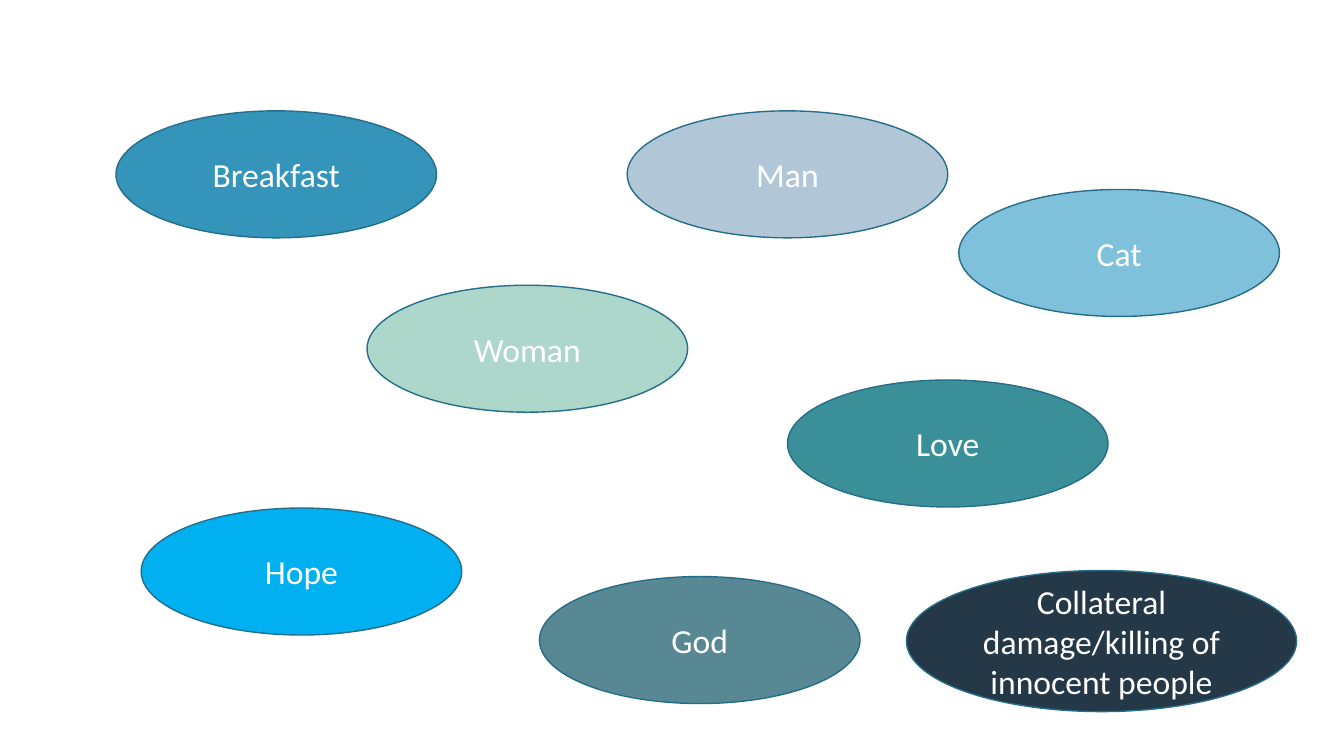
"""Build a slide of concept words, each in its own coloured ellipse."""
from dataclasses import dataclass

import pptx
import pptx.dml.color
import pptx.enum.shapes
import pptx.enum.text
import pptx.util

Inches = pptx.util.Inches


@dataclass(frozen=True)
class Concept:
    """A word with the place, fill and size of its ellipse in inches."""
    word: str
    left: float
    top: float
    fill: str
    width: float = 3.18
    height: float = 1.26


CONCEPTS = [
    Concept("Breakfast", 1.15, 1.1, "3494BA"),
    Concept("Man", 6.22, 1.1, "B1C6D7"),
    Concept("Woman", 3.64, 2.83, "ACD7CA"),
    Concept("Hope", 1.4, 5.04, "00B0F0"),
    Concept("Love", 7.81, 3.77, "3A8F98"),
    Concept("God", 5.35, 5.72, "588894"),
    Concept("Cat", 9.51, 1.88, "7FC1DB"),
    Concept("Collateral damage/killing of innocent people", 8.99, 5.66, "253848", 3.87, 1.4),
]


def paint(color_format, hex_color: str) -> None:
    """Set a colour from a hex string."""
    color_format.rgb = pptx.dml.color.RGBColor.from_string(hex_color)


def write(frame, text: str, *, size: float = 24, font: str = "Calibri", color: str = "FFFFFF") -> None:
    """Write centred, wrapped text into a text frame."""
    frame.word_wrap = True
    frame.vertical_anchor = pptx.enum.text.MSO_ANCHOR.MIDDLE
    paragraph = frame.paragraphs[0]
    paragraph.alignment = pptx.enum.text.PP_ALIGN.CENTER
    run = paragraph.add_run()
    run.text = text
    run.font.size = pptx.util.Pt(size)
    run.font.name = font
    paint(run.font.color, color)


def draw_concept(slide, concept: Concept) -> None:
    """Draw one concept as a filled and outlined ellipse."""
    ellipse = slide.shapes.add_shape(
        pptx.enum.shapes.MSO_SHAPE.OVAL,
        Inches(concept.left), Inches(concept.top),
        Inches(concept.width), Inches(concept.height),
    )
    ellipse.shadow.inherit = False
    ellipse.fill.solid()
    paint(ellipse.fill.fore_color, concept.fill)
    paint(ellipse.line.color, "266D8A")
    ellipse.line.width = pptx.util.Pt(1)
    write(ellipse.text_frame, concept.word)


def main() -> None:
    """Build and save the slide."""
    deck = pptx.Presentation()
    deck.slide_width = Inches(13.33)
    deck.slide_height = Inches(7.5)
    slide = deck.slides.add_slide(deck.slide_layouts[6])
    slide.background.fill.solid()
    paint(slide.background.fill.fore_color, "FFFFFF")
    for concept in CONCEPTS:
        draw_concept(slide, concept)
    deck.save("out.pptx")


if __name__ == "__main__":
    main()
